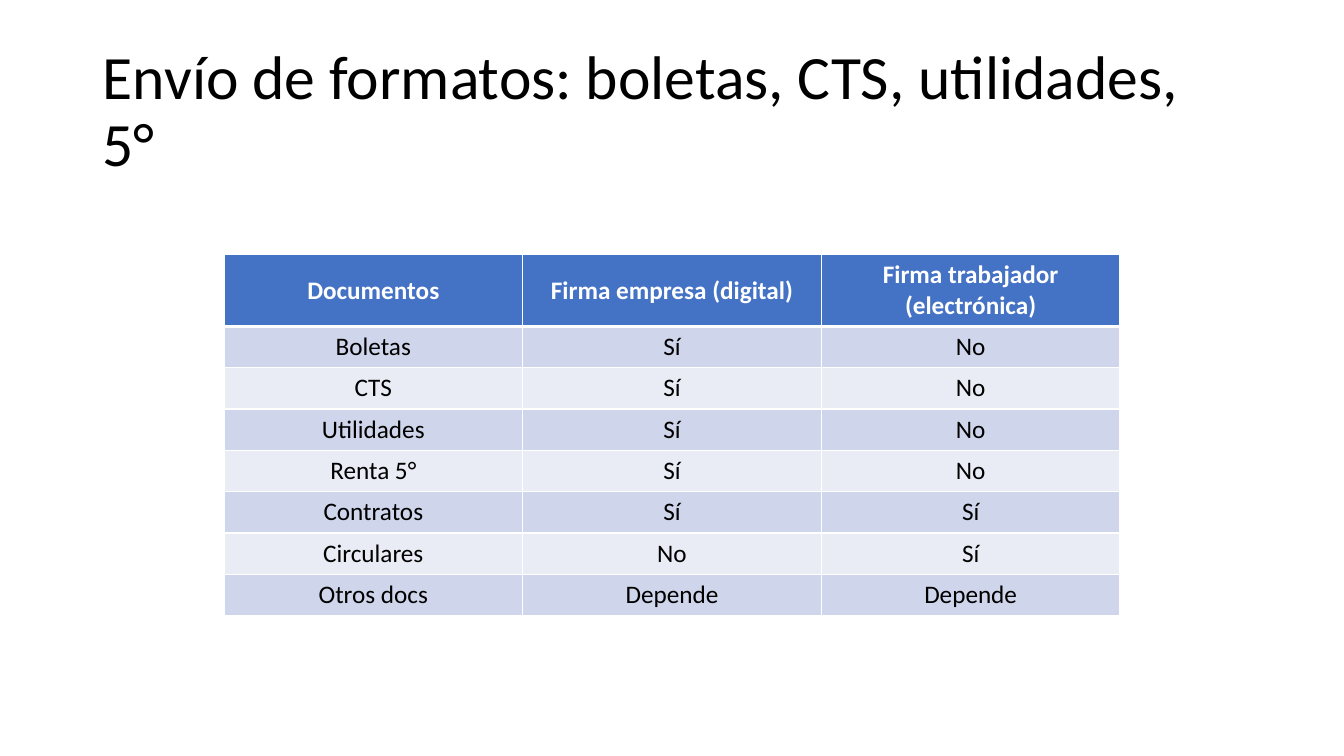
from dataclasses import dataclass

from lxml import etree
from pptx import Presentation, util as u
from pptx.dml.color import RGBColor
from pptx.enum import text as t
from pptx.oxml import ns

SLIDE_W, SLIDE_H = 13.33, 7.5
FONT = "Calibri"
WHITE, BLACK = "FFFFFF", "000000"
HEADER_BLUE = "4472C4"
BANDS = ("CFD5EA", "E9EBF5")
HEADER_H, ROW_H = 0.7, 0.41
THIN, THICK = 1, 3


@dataclass(frozen=True)
class Document:
    name: str
    company_signs: str
    worker_signs: str


@dataclass(frozen=True)
class RowStyle:
    fill: str
    ink: str
    bold: bool
    anchor: t.MSO_ANCHOR
    top_line: int
    bottom_line: int


HEADINGS = Document("Documentos", "Firma empresa (digital)", "Firma trabajador (electrónica)")
DOCUMENTS = [
    Document("Boletas", "Sí", "No"),
    Document("CTS", "Sí", "No"),
    Document("Utilidades", "Sí", "No"),
    Document("Renta 5°", "Sí", "No"),
    Document("Contratos", "Sí", "Sí"),
    Document("Circulares", "No", "Sí"),
    Document("Otros docs", "Depende", "Depende"),
]


def colour(value: str) -> RGBColor:
    return RGBColor.from_string(value)


def across(share: float) -> int:
    return u.Inches(SLIDE_W * share)


def down(share: float) -> int:
    return u.Inches(SLIDE_H * share)


def add_run(paragraph, words: str, size: int, ink: str, bold: bool = False) -> None:
    run = paragraph.add_run()
    run.text = words
    run.font.name = FONT
    run.font.size = u.Pt(size)
    run.font.bold = bold
    run.font.color.rgb = colour(ink)


def draw_borders(cell, top: int, bottom: int) -> None:
    """Border lines have to stand ahead of the fill in the cell properties."""
    properties = cell._tc.get_or_add_tcPr()
    sides = {"lnL": THIN, "lnR": THIN, "lnT": top, "lnB": bottom}
    for index, (side, points) in enumerate(sides.items()):
        line = etree.Element(ns.qn(f"a:{side}"), w=str(u.Pt(points)))
        solid = etree.SubElement(line, ns.qn("a:solidFill"))
        etree.SubElement(solid, ns.qn("a:srgbClr"), val=WHITE)
        properties.insert(index, line)


def row_style(row: int) -> RowStyle:
    if row == 0:
        return RowStyle(HEADER_BLUE, WHITE, True, t.MSO_ANCHOR.MIDDLE, THIN, THICK)
    top_line = THICK if row == 1 else THIN
    return RowStyle(BANDS[(row - 1) % 2], BLACK, False, t.MSO_ANCHOR.TOP, top_line, THIN)


def fill_cell(cell, words: str, style: RowStyle) -> None:
    cell.fill.solid()
    cell.fill.fore_color.rgb = colour(style.fill)
    cell.vertical_anchor = style.anchor
    draw_borders(cell, style.top_line, style.bottom_line)
    paragraph = cell.text_frame.paragraphs[0]
    paragraph.alignment = t.PP_ALIGN.CENTER
    add_run(paragraph, words, 18, style.ink, style.bold)


def add_title(slide, words: str) -> None:
    title = slide.shapes.title
    title.left, title.top = across(0.069), down(0.053)
    title.width, title.height = across(0.863), down(0.193)
    frame = title.text_frame
    frame.word_wrap = True
    frame.auto_size = t.MSO_AUTO_SIZE.NONE
    frame.vertical_anchor = t.MSO_ANCHOR.MIDDLE
    paragraph = frame.paragraphs[0]
    paragraph.alignment = t.PP_ALIGN.LEFT
    paragraph.line_spacing = 0.9
    add_run(paragraph, words, 44, BLACK)


def add_signature_table(slide, rows: list[Document]) -> None:
    height = u.Inches(HEADER_H + ROW_H * (len(rows) - 1))
    # The table fills the middle four sixths of the slide
    table = slide.shapes.add_table(
        len(rows), 3, across(1 / 6), down(0.337), across(4 / 6), height
    ).table
    for index, document in enumerate(rows):
        table.rows[index].height = u.Inches(ROW_H if index else HEADER_H)
        style = row_style(index)
        entries = (document.name, document.company_signs, document.worker_signs)
        for column, words in enumerate(entries):
            fill_cell(table.cell(index, column), words, style)


def main() -> None:
    deck = Presentation()
    deck.slide_width, deck.slide_height = u.Inches(SLIDE_W), u.Inches(SLIDE_H)
    slide = deck.slides.add_slide(deck.slide_layouts[5])

    # Title
    add_title(slide, "Envío de formatos: boletas, CTS, utilidades, 5°")

    # Who signs each document
    add_signature_table(slide, [HEADINGS, *DOCUMENTS])

    deck.save("out.pptx")


if __name__ == "__main__":
    main()
